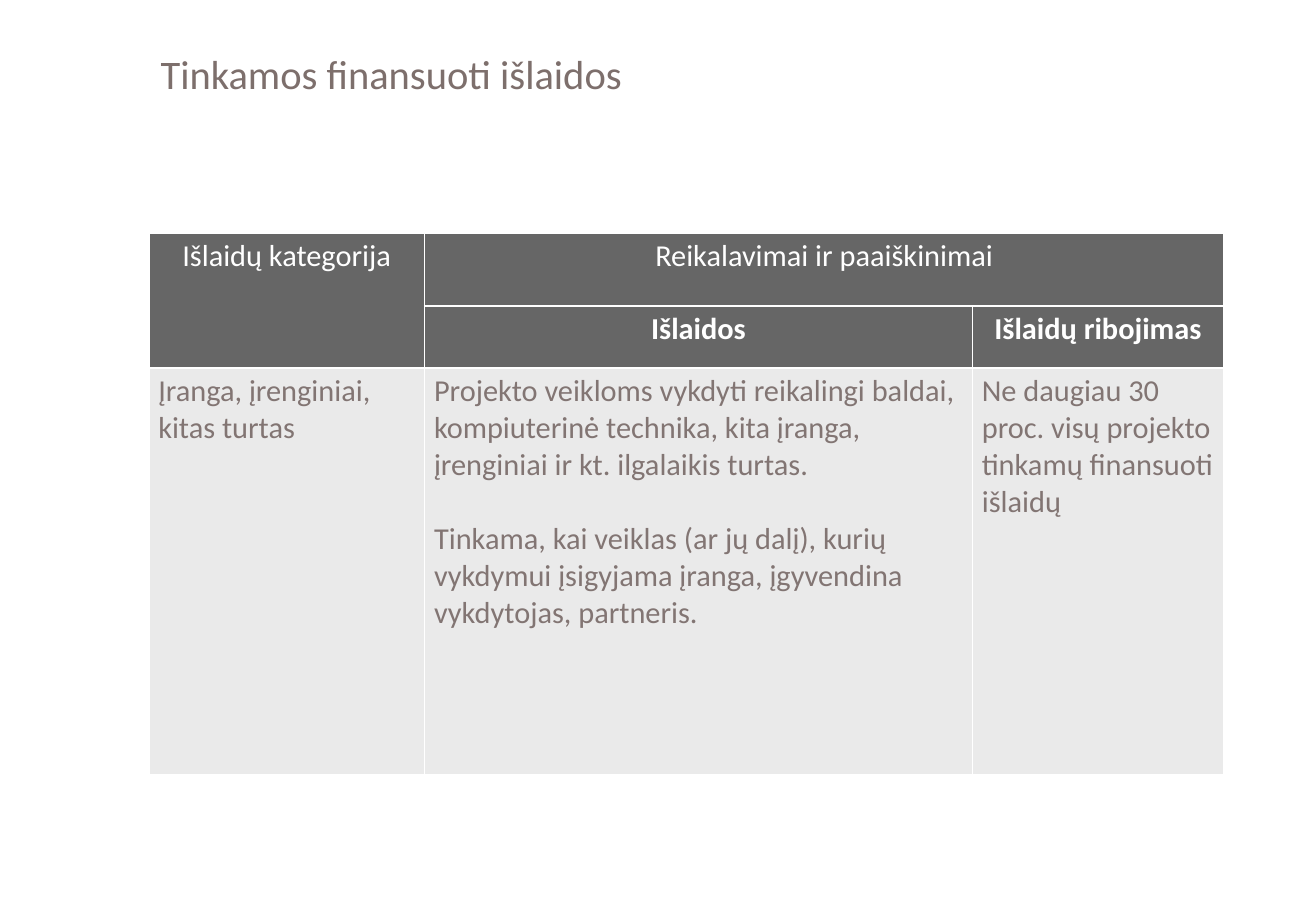
from pptx import Presentation
from pptx.dml.color import RGBColor
from pptx.enum.text import MSO_ANCHOR as Anchor, PP_ALIGN as Align
from pptx.oxml.ns import qn
from pptx.util import Pt
from lxml.etree import SubElement as Sub

# Content: (row, column, row span, column span, bold, paragraphs)
TITLE = "Tinkamos finansuoti išlaidos"
HEAD = [
    (0, 0, 2, 1, False, ["Išlaidų kategorija"]),
    (0, 1, 1, 2, False, ["Reikalavimai ir paaiškinimai"]),
    (1, 1, 1, 1, True, ["Išlaidos"]),
    (1, 2, 1, 1, True, ["Išlaidų ribojimas"]),
]
BODY = [
    (2, 0, 1, 1, False, ["Įranga, įrenginiai, kitas turtas"]),
    (2, 1, 1, 1, False, [
        "Projekto veikloms vykdyti reikalingi baldai, kompiuterinė technika, "
        "kita įranga, įrenginiai ir kt. ilgalaikis turtas.",
        "Tinkama, kai veiklas (ar jų dalį), kurių vykdymui įsigyjama įranga, "
        "įgyvendina vykdytojas, partneris."]),
    (2, 2, 1, 1, False, [
        "Ne daugiau 30 proc. visų projekto tinkamų finansuoti išlaidų"]),
]
COLS = [163.5, 324.7, 149]
ROWS = [43.2, 36.7, 241.2]
LEFT, TOP = 88.2, 138.2
WHITE = "FFFFFF"


def color(code):
    return RGBColor.from_string(code)


def write(par, text, size, code, bold=False):
    run = par.add_run()
    run.text = text
    font = run.font
    font.name, font.size, font.bold = "Calibri", Pt(size), bold
    font.color.rgb = color(code)


def border(cell):
    props = cell._tc.get_or_add_tcPr()
    for side in "LRTB":
        line = Sub(props, qn("a:ln" + side), w=str(Pt(1)))
        Sub(Sub(line, qn("a:solidFill")), qn("a:srgbClr"), val=WHITE)


# Slide
deck = Presentation()
deck.slide_width, deck.slide_height = Pt(780), Pt(540)
slide = deck.slides.add_slide(deck.slide_layouts[5])

# Title
title = slide.shapes.title
title.left, title.top, title.width, title.height = (
    Pt(n) for n in (88, 23.8, 643.7, 43.2))
frame = title.text_frame
frame.vertical_anchor = Anchor.MIDDLE
par = frame.paragraphs[0]
par.alignment, par.line_spacing = Align.LEFT, 0.9
write(par, TITLE, 24, "7D6F6C")

# Table grid
grid = slide.shapes.add_table(
    len(ROWS), len(COLS), Pt(LEFT), Pt(TOP), Pt(sum(COLS)), Pt(sum(ROWS))).table
for col, wide in zip(grid.columns, COLS):
    col.width = Pt(wide)
for row, high in zip(grid.rows, ROWS):
    row.height = Pt(high)
for r in range(len(ROWS)):
    for c in range(len(COLS)):
        cell = grid.cell(r, c)
        border(cell)
        cell.fill.solid()
        cell.fill.fore_color.rgb = color("666666" if r < 2 else "EAEAEA")
        cell.margin_left = cell.margin_right = Pt(5.6)
        cell.margin_top = cell.margin_bottom = Pt(2.8)

# Table text
for cells, code, align in ((HEAD, WHITE, Align.CENTER),
                           (BODY, "827573", Align.LEFT)):
    for r, c, down, across, bold, texts in cells:
        cell = grid.cell(r, c)
        if down * across > 1:
            cell.merge(grid.cell(r + down - 1, c + across - 1))
        frame = cell.text_frame
        for i, text in enumerate(texts):
            par = frame.add_paragraph() if i else frame.paragraphs[0]
            par.alignment = align
            if i:
                par.space_before = Pt(22)
            write(par, text, 18, code, bold)

deck.save("out.pptx")
